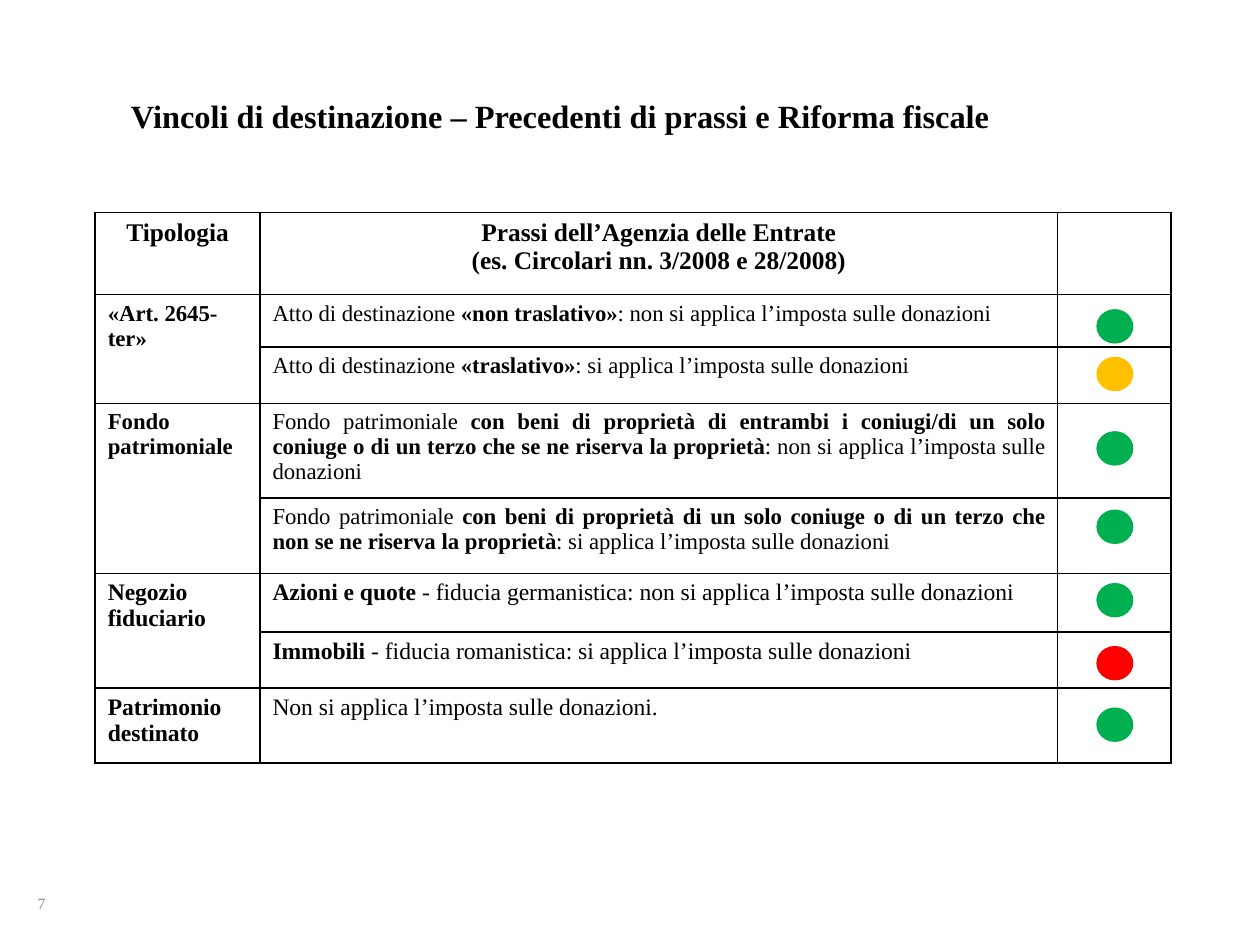
from lxml import etree
from pptx import Presentation
from pptx.dml.color import RGBColor
from pptx.enum.shapes import MSO_SHAPE
from pptx.enum.text import MSO_ANCHOR, PP_ALIGN
from pptx.oxml.ns import qn
from pptx.util import Cm, Pt

FONT = "Times New Roman"
HUES = {"black": "000000", "white": "FFFFFF", "grey": "8C8C8C",
        "green": "00B050", "amber": "FFC000", "red": "FF0000"}
HEAD = ["Tipologia", "Prassi dell’Agenzia delle Entrate\n(es. Circolari nn. 3/2008 e 28/2008)"]
HEAD_HIGH = 1.66
COLS = [3.32, 16.08, 2.29]
LEFT, JUST, MID = PP_ALIGN.LEFT, PP_ALIGN.JUSTIFY, PP_ALIGN.CENTER
# label (empty: merged with the row above), text, alignment, size, height, light, light's drop in its row
ROWS = [
    ("«Art. 2645-ter»", "Atto di destinazione **«non traslativo»**: non si applica l’imposta sulle donazioni",
     JUST, 13, 1.06, "green", 0.31),
    ("", "Atto di destinazione **«traslativo»**: si applica l’imposta sulle donazioni",
     JUST, 13, 1.13, "amber", 0.21),
    ("Fondo patrimoniale", "Fondo patrimoniale **con beni di proprietà di entrambi i coniugi/di un solo coniuge "
     "o di un terzo che se ne riserva la proprietà**: non si applica l’imposta sulle donazioni",
     JUST, 13, 1.76, "green", 0.58),
    ("", "Fondo patrimoniale **con beni di proprietà di un solo coniuge o di un terzo che non se ne "
     "riserva la proprietà**: si applica l’imposta sulle donazioni",
     JUST, 13, 1.52, "green", 0.4),
    ("Negozio fiduciario", "**Azioni e quote **- fiducia germanistica: non si applica l’imposta sulle donazioni",
     LEFT, 13.5, 1.18, "green", 0.36),
    ("", "**Immobili **- fiducia romanistica: si applica l’imposta sulle donazioni",
     JUST, 13.5, 1.13, "red", 0.45),
    ("Patrimonio destinato", "Non si applica l’imposta sulle donazioni.",
     LEFT, 13.5, 1.52, "green", 0.56),
]


def tint(name):
    return RGBColor.from_string(HUES[name])


def style(run, size, bold=False, hue="black"):
    font = run.font
    font.name, font.size, font.bold = FONT, Pt(size), bold
    font.color.rgb = tint(hue)


def write(frame, text, size, align=LEFT):
    """Fill a frame; parts between double asterisks are bold."""
    frame.text = text if "**" not in text else ""
    for para in frame.paragraphs:
        para.alignment = align
    if "**" in text:
        for num, part in enumerate(text.split("**")):
            if part:
                run = frame.paragraphs[0].add_run()
                run.text = part
                style(run, size, num % 2 == 1)
    else:
        for para in frame.paragraphs:
            for run in para.runs:
                style(run, size)


def embolden(frame):
    for para in frame.paragraphs:
        for run in para.runs:
            run.font.bold = True


def frame_cell(cell):
    """White fill and thin black lines on all four sides."""
    cell.fill.solid()
    cell.fill.fore_color.rgb = tint("white")
    props = cell._tc.get_or_add_tcPr()
    for place, side in enumerate(("lnL", "lnR", "lnT", "lnB")):
        line = etree.Element(qn(f"a:{side}"), w=str(Pt(1)))
        fill = etree.SubElement(line, qn("a:solidFill"))
        etree.SubElement(fill, qn("a:srgbClr"), val=HUES["black"])
        props.insert(place, line)


def add_title(slide, left, top, width, height):
    title = slide.shapes.title
    title.left, title.top, title.width, title.height = map(Cm, (left, top, width, height))
    frame = title.text_frame
    frame.margin_left = frame.margin_right = frame.margin_top = frame.margin_bottom = 0
    frame.vertical_anchor = MSO_ANCHOR.TOP
    write(frame, "Vincoli di destinazione – Precedenti di prassi e Riforma fiscale", 18.5)
    embolden(frame)


def add_grid(slide, left, top):
    highs = [HEAD_HIGH] + [row[4] for row in ROWS]
    shape = slide.shapes.add_table(len(highs), len(COLS), Cm(left), Cm(top),
                                   Cm(sum(COLS)), Cm(sum(highs)))
    grid = shape.table
    grid.first_row = grid.horz_banding = False
    for col, width in zip(grid.columns, COLS):
        col.width = Cm(width)
    for row, high in zip(grid.rows, highs):
        row.height = Cm(high)
    for cell in grid.iter_cells():
        frame_cell(cell)
    for col, text in enumerate(HEAD):
        frame = grid.cell(0, col).text_frame
        write(frame, text, 14.5, MID)
        embolden(frame)
    for num, (label, text, align, size, *_) in enumerate(ROWS, 1):
        write(grid.cell(num, 1).text_frame, text, size, align)
        if label:
            frame = grid.cell(num, 0).text_frame
            write(frame, label, size)
            embolden(frame)
        else:
            grid.cell(num - 1, 0).merge(grid.cell(num, 0))


def add_lights(slide, left, top):
    """One traffic light per row, top being that of the first row."""
    for *_, high, hue, drop in ROWS:
        light = slide.shapes.add_shape(MSO_SHAPE.OVAL, Cm(left), Cm(top + drop), Cm(0.71), Cm(0.66))
        light.shadow.inherit = False
        light.fill.solid()
        light.fill.fore_color.rgb = light.line.color.rgb = tint(hue)
        light.line.width = Pt(1)
        top += high


def add_number(slide, left, top, width, height):
    box = slide.shapes.add_textbox(*map(Cm, (left, top, width, height)))
    frame = box.text_frame
    frame.word_wrap = True
    frame.vertical_anchor = MSO_ANCHOR.MIDDLE
    frame.text = "7"
    style(frame.paragraphs[0].runs[0], 9, hue="grey")


def main():
    deck = Presentation()
    deck.slide_width, deck.slide_height = Cm(25.4), Cm(19.05)
    slide = deck.slides.add_slide(deck.slide_layouts[5])
    left, top = 1.92, 4.28
    add_number(slide, 0.51, 17.73, 2.16, 0.94)
    add_title(slide, 2.64, 1.93, 20.8, 0.94)
    add_grid(slide, left, top)
    add_lights(slide, left + sum(COLS[:2]) + 0.8, top + HEAD_HIGH)
    deck.save("out.pptx")


if __name__ == "__main__":
    main()
